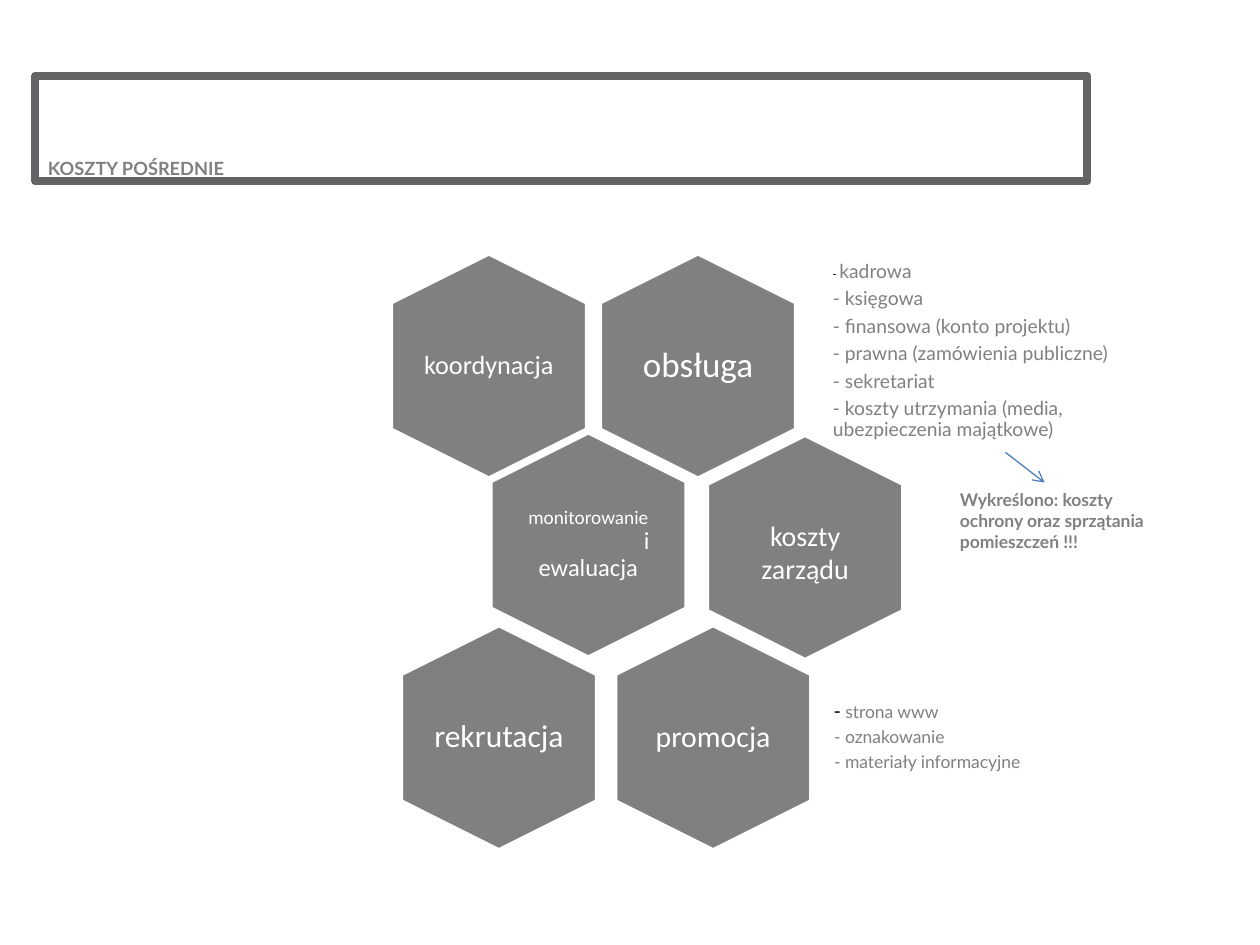
from lxml import etree
from pptx import Presentation
from pptx.dml.color import RGBColor
from pptx.enum.shapes import MSO_CONNECTOR, MSO_SHAPE
from pptx.enum.text import MSO_ANCHOR, MSO_AUTO_SIZE, PP_ALIGN
from pptx.oxml.ns import qn
from pptx.util import Inches, Pt

HEXAGON = MSO_SHAPE.HEXAGON
STRAIGHT = MSO_CONNECTOR.STRAIGHT
TOP, MIDDLE = MSO_ANCHOR.TOP, MSO_ANCHOR.MIDDLE
LEFT, CENTER, RIGHT = PP_ALIGN.LEFT, PP_ALIGN.CENTER, PP_ALIGN.RIGHT

WHITE = RGBColor(0xFF, 0xFF, 0xFF)
BLACK = RGBColor(0, 0, 0)
GRAY = RGBColor(0x80, 0x80, 0x80)
FRAME = RGBColor(0x63, 0x64, 0x66)
BLUE = RGBColor(0x4B, 0x7E, 0xBC)

WIDTH, HEIGHT = Inches(10), Inches(7.5)
HEX_W, HEX_H = 17.8, 20.67    # before the quarter turn
TEXT_W, TEXT_H = 10.7, 16.4

# Left and top in percent of the slide, inset in inches,
# then paragraphs: alignment and (text, size) runs
CELLS = [
    (46.5, 28.4, 0.08, [(CENTER, [("obsługa", 20)])]),
    (29.9, 28.4, 0, [(CENTER, [("koordynacja", 15)])]),
    (37.8, 47.33, 0.05, [(CENTER, [("monitorowanie", 11)]),
                         (RIGHT, [("i", 14)]),
                         (CENTER, [("ewaluacja", 14)])]),
    (55, 47.6, 0, [(CENTER, [("koszty", 16), (" ", 24), ("zarządu", 16)])]),
    (47.7, 67.73, 0.07, [(CENTER, [("promocja", 17)])]),
    (30.7, 67.73, 0, [(CENTER, [("rekrutacja", 18)])]),
]
SERVICE = ["kadrowa", "księgowa", "finansowa (konto projektu)",
           "prawna (zamówienia publiczne)", "sekretariat",
           "koszty utrzymania (media, ubezpieczenia majątkowe)"]
PROMO = ["strona www", "oznakowanie", "materiały informacyjne"]


def place(x, y, w, h):
    """Turn percent of the slide into lengths."""
    return (round(WIDTH * x / 100), round(HEIGHT * y / 100),
            round(WIDTH * w / 100), round(HEIGHT * h / 100))


def style(run, size, color, face, bold=False):
    font = run.font
    font.size, font.name, font.bold = Pt(size), face, bold
    font.color.rgb = color


def add_text(slide, box, inset, anchor=MIDDLE):
    frame = slide.shapes.add_textbox(*place(*box)).text_frame
    frame.word_wrap = True
    frame.vertical_anchor = anchor
    frame.margin_left = frame.margin_right = Inches(inset)
    frame.margin_top = frame.margin_bottom = Inches(inset)
    return frame


def add_title(slide, box):
    title = slide.shapes.title
    title.left, title.top, title.width, title.height = place(*box)
    title.line.color.rgb = FRAME
    title.line.width = Pt(4.5)
    frame = title.text_frame
    frame.text = "KOSZTY POŚREDNIE"
    frame.auto_size = MSO_AUTO_SIZE.NONE
    frame.vertical_anchor = TOP
    frame.margin_top, frame.margin_bottom = Inches(0.62), 0
    line = frame.paragraphs[0]
    line.alignment = LEFT
    run = line.runs[0]
    style(run, 18, GRAY, "Lato", True)
    run.font.fill  # keeps the run properties in place
    run.font._element.set("baseline", "30000")


def add_cell(slide, x, y, inset, lines):
    # Hexagon standing on its point
    cell = slide.shapes.add_shape(HEXAGON, *place(x, y, HEX_W, HEX_H))
    cell.rotation = 90
    cell.adjustments[0] = 0.25
    cell.shadow.inherit = False
    cell.fill.solid()
    cell.fill.fore_color.rgb = GRAY
    cell.line.color.rgb = WHITE
    cell.line.width = Pt(2)
    # Level label in its centre
    box = (x + (HEX_W - TEXT_W) / 2, y + (HEX_H - TEXT_H) / 2, TEXT_W, TEXT_H)
    frame = add_text(slide, box, inset)
    for i, (align, runs) in enumerate(lines):
        line = frame.add_paragraph() if i else frame.paragraphs[0]
        line.alignment, line.line_spacing = align, 0.9
        for text, size in runs:
            run = line.add_run()
            run.text = text
            style(run, size, WHITE, "Calibri")


def add_list(slide, box, inset, items, size, dash):
    frame = add_text(slide, box, inset)
    for i, item in enumerate(items):
        line = frame.add_paragraph() if i else frame.paragraphs[0]
        line.line_spacing, line.space_after = 0.9, Pt(0.35 * size)
        mark, text = line.add_run(), line.add_run()
        mark.text, text.text = "- ", item
        if i:
            style(mark, size, GRAY, "Lato")
        else:
            style(mark, dash, BLACK, "Calibri")
        style(text, size, GRAY, "Lato")


def add_note(slide, box):
    frame = add_text(slide, box, 0.1, TOP)
    frame.margin_top = frame.margin_bottom = Inches(0.05)
    frame.text = "Wykreślono: koszty ochrony oraz sprzątania pomieszczeń !!!"
    style(frame.paragraphs[0].runs[0], 10, GRAY, "Lato", True)


def add_arrow(slide, box):
    x, y, w, h = place(*box)
    arrow = slide.shapes.add_connector(STRAIGHT, x, y, x + w, y + h)
    arrow.line.color.rgb = BLUE
    arrow.line.width = Pt(0.75)
    etree.SubElement(arrow.line._get_or_add_ln(), qn("a:tailEnd"), type="arrow")
    etree.SubElement(arrow._element.spPr, qn("a:effectLst"))


def main():
    deck = Presentation()
    deck.slide_width, deck.slide_height = WIDTH, HEIGHT
    slide = deck.slides.add_slide(deck.slide_layouts[5])
    add_title(slide, (2.8, 8, 83.5, 11.2))
    for cell in CELLS:
        add_cell(slide, *cell)
    add_list(slide, (65.8, 28.53, 25.9, 17.2), 0.03, SERVICE, 11, 7)
    add_list(slide, (65.7, 70.8, 19.2, 14.27), 0.05, PROMO, 10, 12)
    add_note(slide, (75.2, 51.07, 18.9, 8.13))
    add_arrow(slide, (79.8, 47.87, 3.1, 3.2))
    deck.save("out.pptx")


if __name__ == "__main__":
    main()
